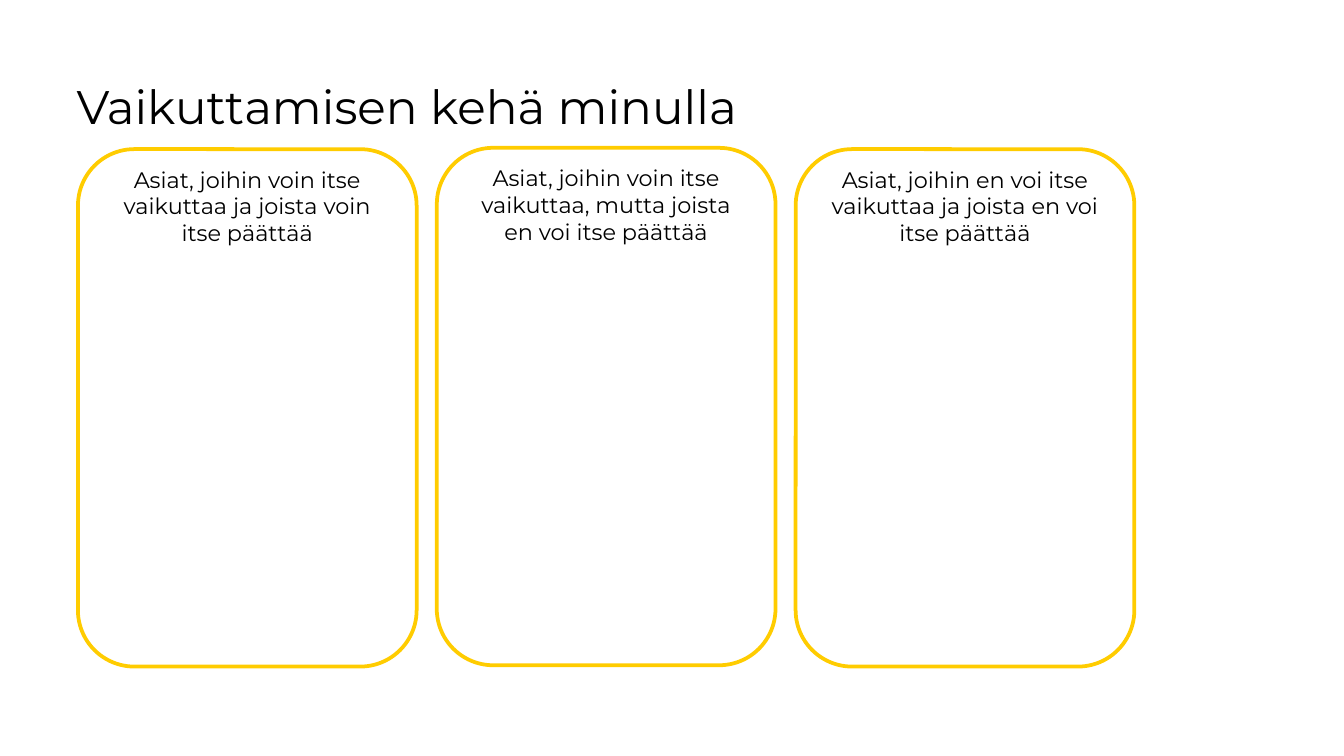
import pptx
import pptx.util
import pptx.dml.color
import pptx.enum.shapes
import pptx.enum.text

Inches = pptx.util.Inches


def color(hex_string):
    return pptx.dml.color.RGBColor.from_string(hex_string)


def write_text(text_frame, text, size, font="Montserrat", text_color="000000",
               align=pptx.enum.text.PP_ALIGN.LEFT,
               anchor=pptx.enum.text.MSO_ANCHOR.TOP, side_inset=0.1, end_inset=0.1):
    text_frame.word_wrap = True
    text_frame.auto_size = pptx.enum.text.MSO_AUTO_SIZE.NONE
    text_frame.vertical_anchor = anchor
    text_frame.margin_left = text_frame.margin_right = Inches(side_inset)
    text_frame.margin_top = text_frame.margin_bottom = Inches(end_inset)
    paragraph = text_frame.paragraphs[0]
    paragraph.alignment = align
    run = paragraph.add_run()
    run.text = text
    run.font.name = font
    run.font.size = pptx.util.Pt(size)
    run.font.color.rgb = color(text_color)


class SlideBuilder:
    fill = "FFFFFF"
    outline = "FFCC00"
    outline_width = 2
    title_size = 25.2
    body_size = 12

    def __init__(self, slide):
        self.slide = slide
        slide.background.fill.solid()
        slide.background.fill.fore_color.rgb = color(self.fill)

    def title(self, text, left, top, width, height):
        shape = self.slide.shapes.title
        shape.left, shape.top = Inches(left), Inches(top)
        shape.width, shape.height = Inches(width), Inches(height)
        write_text(shape.text_frame, text, self.title_size)

    def card(self, text, left, top, width, height):
        shape = self.slide.shapes.add_shape(
            pptx.enum.shapes.MSO_SHAPE.ROUNDED_RECTANGLE,
            Inches(left), Inches(top), Inches(width), Inches(height))
        shape.shadow.inherit = False
        shape.fill.solid()
        shape.fill.fore_color.rgb = color(self.fill)
        shape.line.color.rgb = color(self.outline)
        shape.line.width = pptx.util.Pt(self.outline_width)
        write_text(shape.text_frame, text, self.body_size,
                   align=pptx.enum.text.PP_ALIGN.CENTER, end_inset=0)


def main():
    presentation = pptx.Presentation()
    presentation.slide_width = Inches(10)
    presentation.slide_height = presentation.slide_width * 9 // 16
    builder = SlideBuilder(presentation.slides.add_slide(presentation.slide_layouts[5]))

    builder.title("Vaikuttamisen kehä minulla", 0.47, 0.48, 9.06, 0.63)
    cards = [
        ("Asiat, joihin voin itse vaikuttaa ja joista voin itse päättää", 1.11),
        ("Asiat, joihin voin itse vaikuttaa, mutta joista en voi itse päättää", 1.1),
        ("Asiat, joihin en voi itse vaikuttaa ja joista en voi itse päättää", 1.11),
    ]
    first_left, card_width, gap = 0.58, 2.52, 0.15
    for index, (text, top) in enumerate(cards):
        builder.card(text, first_left + index * (card_width + gap), top, card_width, 3.85)

    presentation.save("out.pptx")


if __name__ == "__main__":
    main()
